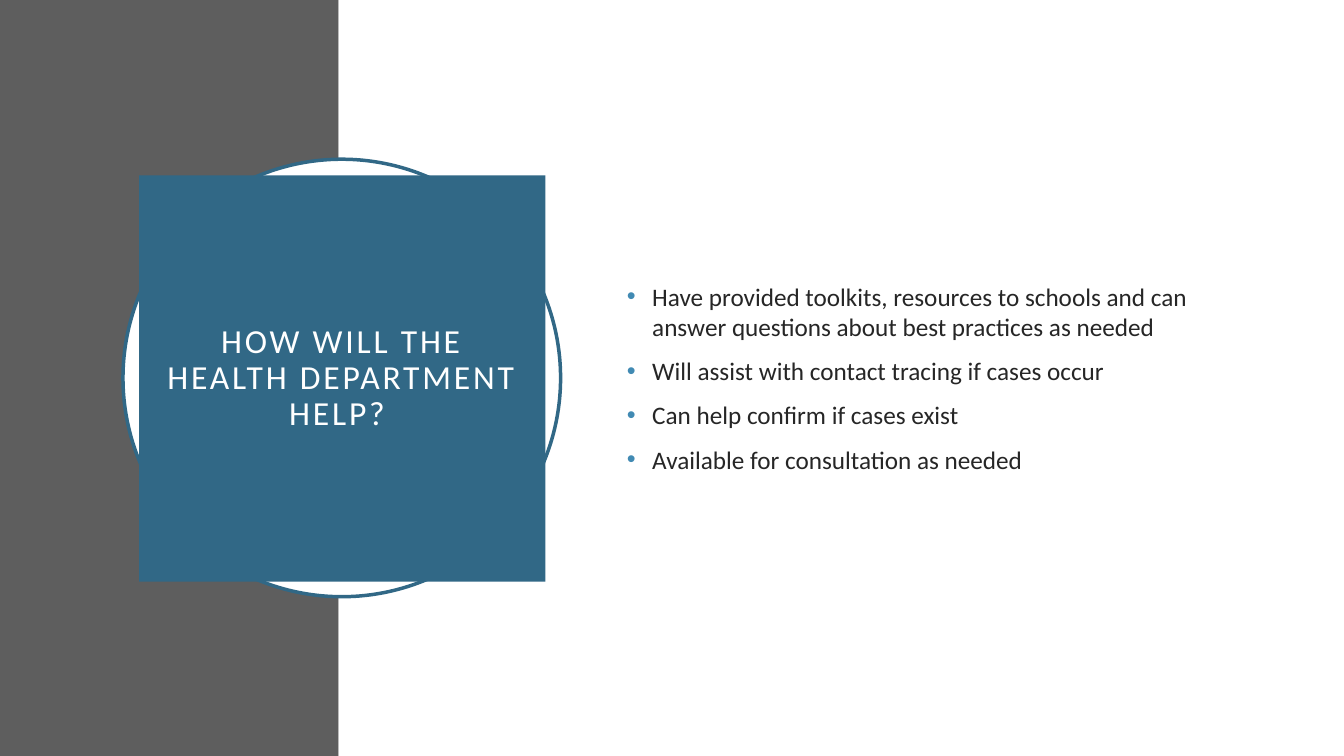
from dataclasses import dataclass

from lxml.etree import SubElement
from pptx import Presentation
from pptx.dml.color import RGBColor
from pptx.enum.shapes import MSO_SHAPE
from pptx.enum.text import MSO_ANCHOR, MSO_AUTO_SIZE, PP_ALIGN
from pptx.oxml.ns import qn
from pptx.util import Inches, Pt

BLUE = "316886"
BULLET_BLUE = "418AB3"
GREY = "5E5E5E"
INK = "262626"
WHITE = "FFFFFF"
SLIDE_WIDTH, SLIDE_HEIGHT = 13.33, 7.5
BAND_WIDTH = 3.36
TITLE = "HOW WILL THE HEALTH DEPARTMENT HELP? "
SUPPORT = (
    "Have provided toolkits, resources to schools and can answer questions about best practices as needed",
    "Will assist with contact tracing if cases occur",
    "Can help confirm if cases exist",
    "Available for consultation as needed",
)


@dataclass(frozen=True)
class Panel:
    """A filled backdrop shape measured in inches."""

    kind: MSO_SHAPE
    left: float
    top: float
    width: float
    height: float
    fill: str
    line: str | None = None


PANELS = (
    Panel(MSO_SHAPE.RECTANGLE, 0, 0, BAND_WIDTH, SLIDE_HEIGHT, GREY),
    Panel(MSO_SHAPE.RECTANGLE, BAND_WIDTH, 0, SLIDE_WIDTH - BAND_WIDTH, SLIDE_HEIGHT, WHITE),
    Panel(MSO_SHAPE.OVAL, 1.22, 1.58, 4.34, 4.34, WHITE, BLUE),
)


def color(code: str) -> RGBColor:
    """Turn a hex string into a colour."""
    return RGBColor.from_string(code)


def draw_panel(slide, panel: Panel) -> None:
    """Draw one backdrop shape."""
    box = map(Inches, (panel.left, panel.top, panel.width, panel.height))
    shape = slide.shapes.add_shape(panel.kind, *box)
    shape.shadow.inherit = False
    shape.fill.solid()
    shape.fill.fore_color.rgb = color(panel.fill)
    if panel.line:
        shape.line.color.rgb = color(panel.line)
        shape.line.width = Pt(2.5)
    else:
        shape.line.fill.background()


def place(shape, left: float, top: float, width: float, height: float) -> None:
    """Position a shape and prepare its text frame."""
    shape.left, shape.top, shape.width, shape.height = map(Inches, (left, top, width, height))
    frame = shape.text_frame
    frame.word_wrap = True
    frame.auto_size = MSO_AUTO_SIZE.NONE
    frame.vertical_anchor = MSO_ANCHOR.MIDDLE


def write(paragraph, text: str, *, size: float, ink: str, align: PP_ALIGN = PP_ALIGN.LEFT,
          line_spacing: float = 1.0, before: float = 0, tracking: float = 0,
          bullet: str | None = None) -> None:
    """Write formatted text into a paragraph."""
    paragraph.alignment = align
    paragraph.line_spacing = line_spacing
    paragraph.space_before = Pt(before)
    run = paragraph.add_run()
    run.text = text
    run.font.name = "Calibri"
    run.font.size = Pt(size)
    run.font.color.rgb = color(ink)
    if tracking:
        run.font._element.set("spc", str(int(tracking * 100)))
    if bullet:
        properties = paragraph._p.get_or_add_pPr()
        properties.set("marL", str(Inches(0.25)))
        properties.set("indent", str(-Inches(0.25)))
        bullet_color = SubElement(properties, qn("a:buClr"))
        SubElement(bullet_color, qn("a:srgbClr"), val=bullet)
        SubElement(properties, qn("a:buFont"), typeface="Arial")
        SubElement(properties, qn("a:buChar"), char="•")


def add_title(slide) -> None:
    """Format the title placeholder as the blue square above the ring."""
    title = slide.shapes.title
    title.element.getparent().append(title.element)
    place(title, 1.38, 1.74, 4.03, 4.03)
    title.fill.solid()
    title.fill.fore_color.rgb = color(BLUE)
    frame = title.text_frame
    frame.margin_left = frame.margin_right = Inches(0.2)
    frame.margin_top = frame.margin_bottom = Inches(0.2)
    write(frame.paragraphs[0], TITLE, size=24, ink=WHITE, align=PP_ALIGN.CENTER,
          line_spacing=0.9, tracking=2)


def add_support(slide) -> None:
    """List the ways the department helps."""
    support = slide.shapes.add_textbox(0, 0, 0, 0)
    place(support, 6.12, 1.53, 5.82, 4.43)
    frame = support.text_frame
    for index, item in enumerate(SUPPORT):
        paragraph = frame.add_paragraph() if index else frame.paragraphs[0]
        write(paragraph, item, size=18, ink=INK, before=10, bullet=BULLET_BLUE)


def main() -> None:
    """Build and save the slide."""
    deck = Presentation()
    deck.slide_width, deck.slide_height = Inches(SLIDE_WIDTH), Inches(SLIDE_HEIGHT)
    slide = deck.slides.add_slide(deck.slide_layouts.get_by_name("Title Only"))
    for panel in PANELS:
        draw_panel(slide, panel)
    add_title(slide)
    add_support(slide)
    deck.save("out.pptx")


if __name__ == "__main__":
    main()
